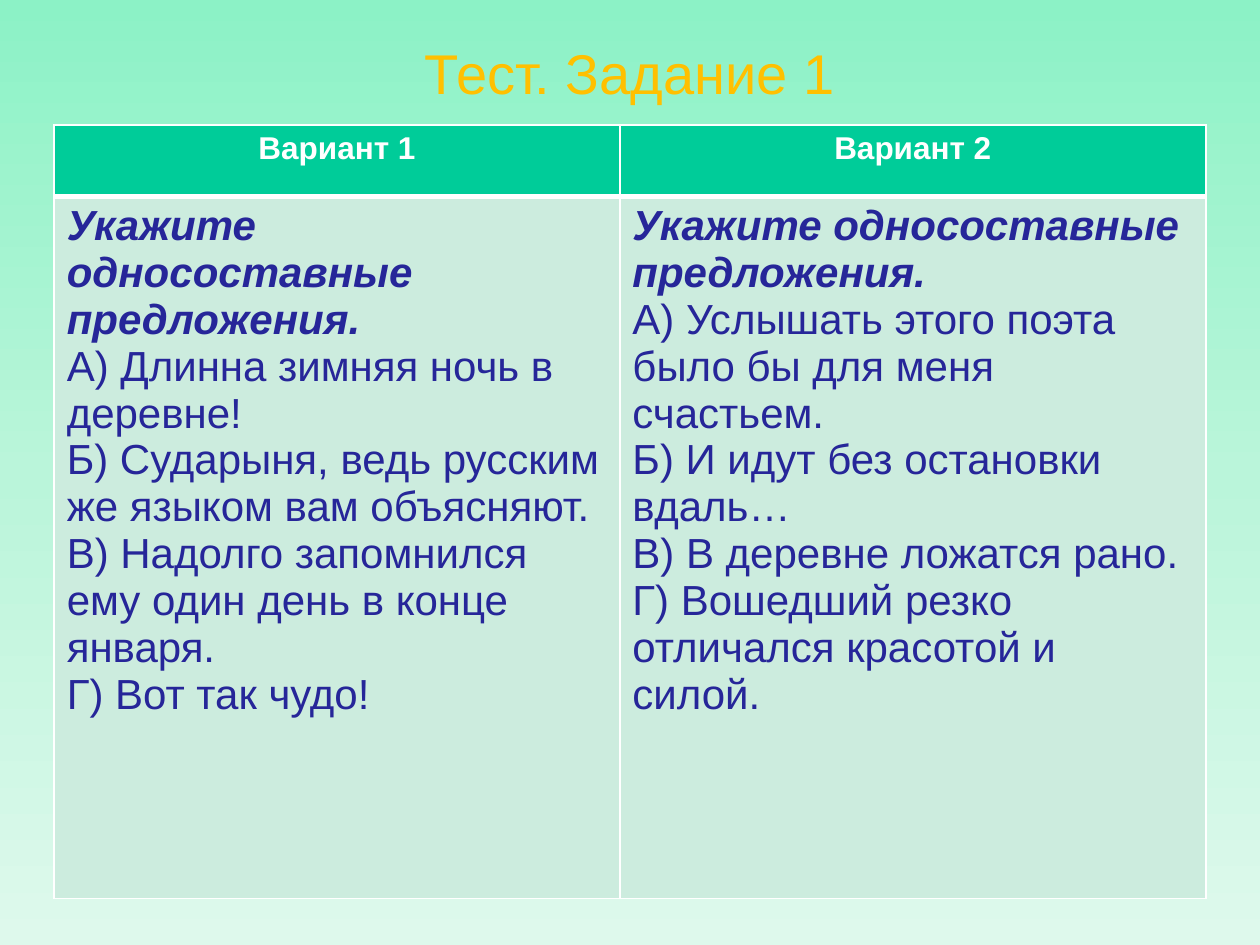
from copy import deepcopy
from dataclasses import dataclass

from lxml import etree
from pptx import Presentation
from pptx.dml.color import RGBColor
from pptx.enum.text import MSO_ANCHOR, PP_ALIGN
from pptx.oxml.ns import qn
from pptx.util import Inches, Pt

CENTER, LEFT = PP_ALIGN.CENTER, PP_ALIGN.LEFT
MIDDLE = MSO_ANCHOR.MIDDLE


@dataclass(frozen=True)
class Theme:
    font: str = "Arial"
    title_size: int = 32
    header_size: int = 18
    body_size: int = 24
    title: str = "FFC000"
    white: str = "FFFFFF"
    body: str = "262699"
    header_fill: str = "00CC99"
    body_fill: str = "CCECDE"
    background: tuple = ("8CF2C6", "BAF5DA", "DEF9EC")


theme = Theme()


def style_paragraph(para, size, color, align, bold=False, italic=False):
    para.alignment = align
    font = para.font
    font.name, font.size = theme.font, Pt(size)
    font.bold, font.italic = bold, italic
    font.color.rgb = RGBColor.from_string(color)


def set_borders(cell, widths):
    """Add solid white borders; widths maps a side tag to points."""
    properties = cell._tc.get_or_add_tcPr()
    for index, (side, width) in enumerate(widths.items()):
        line = etree.Element(qn(f"a:{side}"), w=str(Pt(width)))
        fill = etree.SubElement(line, qn("a:solidFill"))
        etree.SubElement(fill, qn("a:srgbClr"), val=theme.white)
        properties.insert(index, line)


deck = Presentation()
deck.slide_width, deck.slide_height = Inches(10), Inches(7.5)
page = deck.slides.add_slide(deck.slide_layouts[5])

# Background: three-stop gradient from top to bottom
fill = page.background.fill
fill.gradient()
fill.gradient_angle = 270
stop_list = page.element.find(".//" + qn("a:gsLst"))
stop_list.insert(1, deepcopy(stop_list[0]))
for stop, position, color in zip(fill.gradient_stops, (0, 0.5, 1), theme.background):
    stop.position = position
    stop.color.rgb = RGBColor.from_string(color)

# Title
title = page.shapes.title
title.left, title.top = Inches(0.5), Inches(0.3)
title.width, title.height = Inches(9), Inches(0.54)
title.text_frame.text = "Тест. Задание 1"
title.text_frame.vertical_anchor = MIDDLE
style_paragraph(title.text_frame.paragraphs[0], theme.title_size, theme.title, CENTER)

# Table: one column per variant
question = "Укажите односоставные предложения."
variants = {
    "Вариант 1": [
        "А) Длинна зимняя ночь в деревне!",
        "Б) Сударыня, ведь русским же языком вам объясняют.",
        "В) Надолго запомнился ему один день в конце января.",
        "Г) Вот так чудо!",
    ],
    "Вариант 2": [
        "А) Услышать этого поэта было бы для меня счастьем.",
        "Б) И идут без остановки вдаль…",
        "В) В деревне ложатся рано.",
        "Г) Вошедший резко отличался красотой и силой.",
    ],
}
column_widths = (4.49, 4.65)
row_heights = (0.57, 5.57)
table = page.shapes.add_table(
    2, 2, Inches(0.43), Inches(0.99),
    Inches(sum(column_widths)), Inches(sum(row_heights)),
).table
for row, height in zip(table.rows, row_heights):
    row.height = Inches(height)

for index, (heading, answers) in enumerate(variants.items()):
    table.columns[index].width = Inches(column_widths[index])
    header, body = table.cell(0, index), table.cell(1, index)

    # Header cell
    header.text = heading
    style_paragraph(header.text_frame.paragraphs[0], theme.header_size,
                    theme.white, CENTER, bold=True)

    # Body cell: question first, then the answers
    body.text = "\n".join([question, *answers])
    for number, para in enumerate(body.text_frame.paragraphs):
        is_question = number == 0
        style_paragraph(para, theme.body_size, theme.body, LEFT,
                        bold=is_question, italic=is_question)

    # Fills and borders, with a thick rule under the header
    for cell, color, top, bottom in ((header, theme.header_fill, 1, 3),
                                     (body, theme.body_fill, 3, 1)):
        cell.fill.solid()
        cell.fill.fore_color.rgb = RGBColor.from_string(color)
        set_borders(cell, {"lnL": 1, "lnR": 1, "lnT": top, "lnB": bottom})

deck.save("out.pptx")
